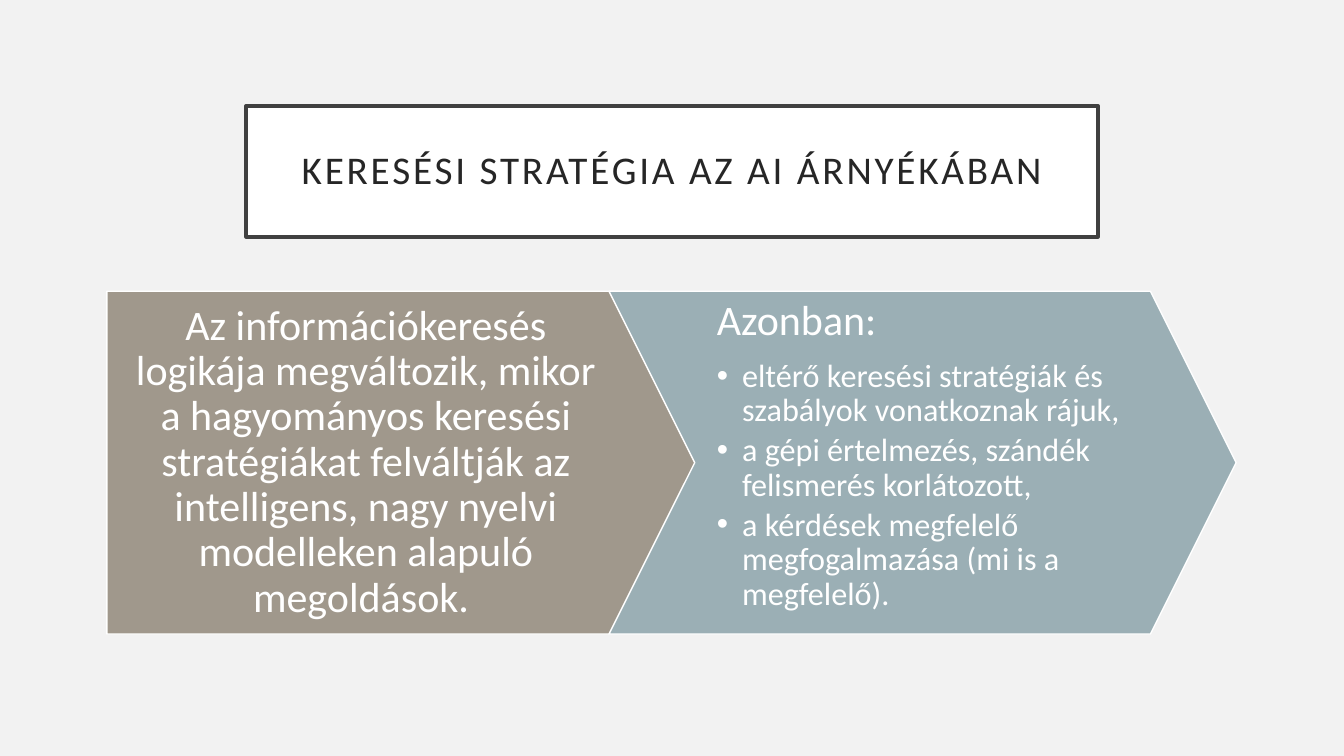
from lxml import etree
from pptx import Presentation
from pptx.dml.color import RGBColor
from pptx.enum.shapes import MSO_SHAPE as Shape
from pptx.enum.text import MSO_ANCHOR as Anchor, PP_ALIGN as Align
from pptx.oxml.ns import qn
from pptx.util import Inches, Pt

COLORS = {
    "background": "F2F2F2",
    "white": "FFFFFF",
    "frame": "404040",
    "title": "262626",
    "taupe": "A0988C",
    "teal": "9BAFB5",
}
FONT = "Calibri"
ARROW_TOP, ARROW_WIDTH, ARROW_HEIGHT = 2.89, 6.22, 3.4


def add_block(kind, left, top, width, height, fill, line, line_width):
    block = page.shapes.add_shape(
        kind, Inches(left), Inches(top), Inches(width), Inches(height))
    block.shadow.inherit = False
    block.fill.solid()
    block.fill.fore_color.rgb = RGBColor.from_string(COLORS[fill])
    block.line.color.rgb = RGBColor.from_string(COLORS[line])
    block.line.width = Pt(line_width)
    return block


def write(shape, lines, insets, color, anchor, align):
    """Fill a shape with (text, size, space after, bulleted) lines."""
    frame = shape.text_frame
    frame.word_wrap = True
    frame.vertical_anchor = anchor
    (frame.margin_left, frame.margin_top,
     frame.margin_right, frame.margin_bottom) = map(Inches, insets)
    for index, (text, size, after, bulleted) in enumerate(lines):
        para = frame.add_paragraph() if index else frame.paragraphs[0]
        para.alignment = align
        para.line_spacing = 0.9
        para.space_after = Pt(after)
        if bulleted:
            para.level = 1
            props = para._p.get_or_add_pPr()
            props.set("marL", str(Inches(0.25)))
            props.set("indent", str(Inches(-0.25)))
            etree.SubElement(props, qn("a:buFont"), typeface="Arial")
            etree.SubElement(props, qn("a:buChar"), char="•")
        span = para.add_run()
        span.text = text
        span.font.name = FONT
        span.font.size = Pt(size)
        span.font.color.rgb = RGBColor.from_string(COLORS[color])


deck = Presentation()
deck.slide_width, deck.slide_height = Inches(13.33), Inches(7.5)
page = deck.slides.add_slide(deck.slide_layouts[6])
page.background.fill.solid()
page.background.fill.fore_color.rgb = RGBColor.from_string(COLORS["background"])

# Framed title with letter spacing
title = add_block(Shape.RECTANGLE, 2.44, 1.05, 8.45, 1.3, "white", "frame", 2.5)
write(title, [("KERESÉSI STRATÉGIA AZ AI ÁRNYÉKÁBAN", 28, 0, False)],
      (0.2, 0.2, 0.2, 0.2), "title", Anchor.MIDDLE, Align.CENTER)
title_span = title.text_frame.paragraphs[0].runs[0]
title_span.font._element.set("spc", "200")

# Two interlocking arrows, each with its own text area
change = [("Az információkeresés logikája megváltozik, mikor a hagyományos "
           "keresési stratégiákat felváltják az intelligens, nagy nyelvi "
           "modelleken alapuló megoldások. ", 30, 10.5, False)]
limits = [
    ("Azonban:", 30, 10.5, False),
    ("eltérő keresési stratégiák és szabályok vonatkoznak rájuk,", 23, 3.5, True),
    ("a gépi értelmezés, szándék felismerés korlátozott,", 23, 3.5, True),
    ("a kérdések megfelelő megfogalmazása (mi is a megfelelő).", 23, 3.5, True),
]
arrows = [
    (Shape.PENTAGON, 1.06, "taupe", 1.06, 5.8, change,
     (0.22, 0.08, 0.88, 0.08), Anchor.MIDDLE, Align.CENTER),
    (Shape.CHEVRON, 6.04, "teal", 6.89, 4.53, limits,
     (0.22, 0.08, 0.22, 0.08), Anchor.TOP, Align.LEFT),
]
for kind, left, fill, text_left, text_width, lines, insets, anchor, align in arrows:
    arrow = add_block(kind, left, ARROW_TOP, ARROW_WIDTH, ARROW_HEIGHT,
                      fill, "white", 1)
    arrow.adjustments[0] = 0.25
    box = page.shapes.add_textbox(Inches(text_left), Inches(ARROW_TOP),
                                  Inches(text_width), Inches(ARROW_HEIGHT))
    write(box, lines, insets, "white", anchor, align)

deck.save("out.pptx")
